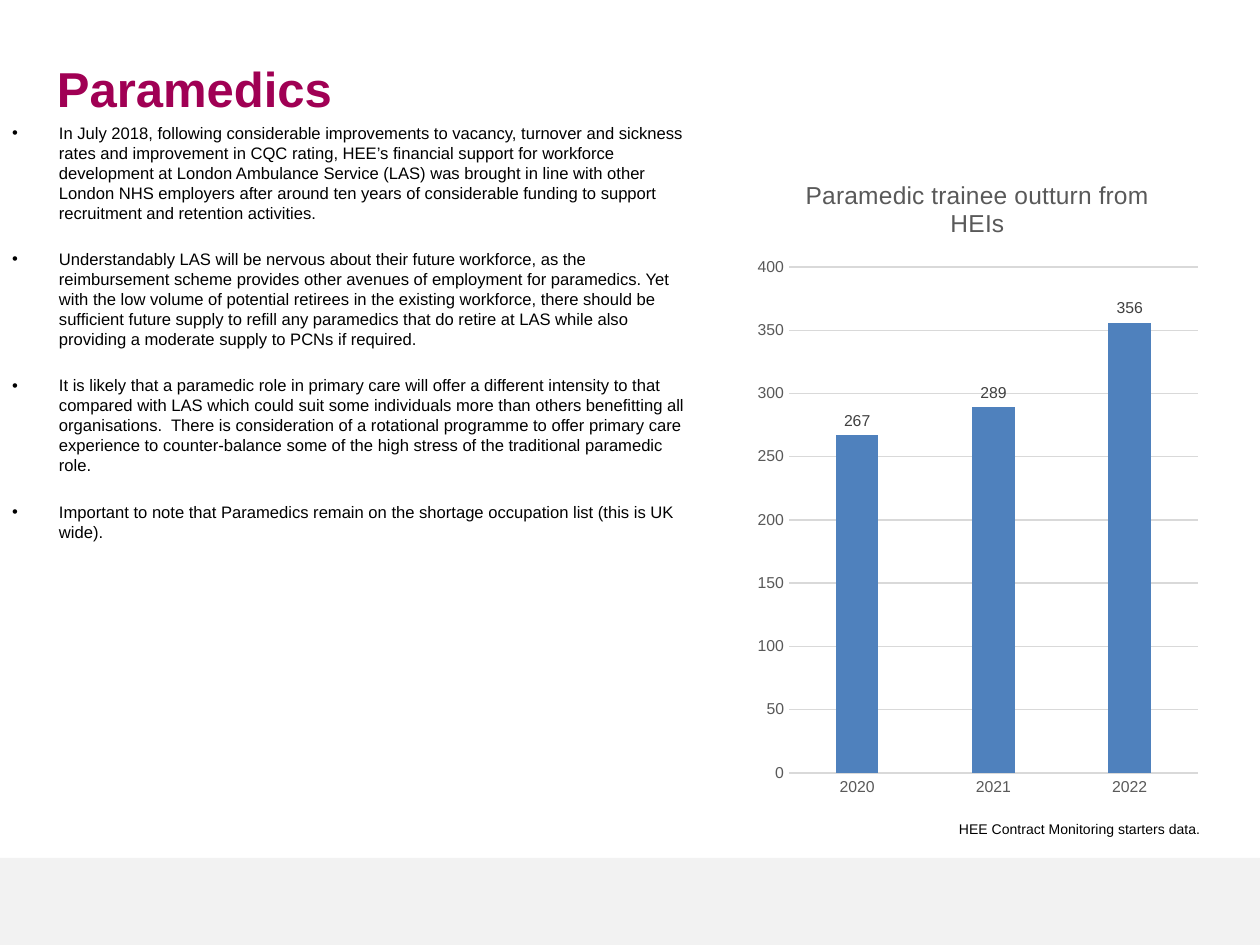
from dataclasses import dataclass

from lxml.etree import SubElement
from pptx import Presentation
from pptx.chart.data import CategoryChartData
from pptx.dml.color import RGBColor
from pptx.enum.chart import XL_CHART_TYPE as ChartType
from pptx.enum.chart import XL_LABEL_POSITION as LabelPosition
from pptx.enum.chart import XL_TICK_MARK as TickMark
from pptx.enum.shapes import MSO_SHAPE as Shape
from pptx.oxml import parse_xml
from pptx.oxml.ns import nsdecls, qn
from pptx.util import Pt

EMU_PER_PX = 914400 / 126


@dataclass(frozen=True)
class Theme:
    font: str = "Arial"
    heading: str = "A00054"
    ink: str = "000000"
    band: str = "F2F2F2"
    bar: str = "4F81BD"
    grid: str = "D9D9D9"
    axis: str = "595959"
    label: str = "404040"
    heading_size: float = 28
    body_size: float = 9.5
    body_line: float = 11.4
    body_gap: float = 15.1
    note_size: float = 8
    chart_title_size: float = 14
    chart_size: float = 9


@dataclass(frozen=True)
class Area:
    left: int
    top: int
    width: int
    height: int

    def emu(self) -> tuple:
        return tuple(px(side) for side in (self.left, self.top, self.width, self.height))


@dataclass(frozen=True)
class TextBlock:
    area: Area
    lines: tuple
    size: float
    color: str
    bold: bool = False
    bulleted: bool = False


THEME = Theme()
CHART_AREA = Area(748, 155, 459, 655)
PLOT_AREA = Area(789, 267, 409, 506)
BULLET_INDENT = 47
CHART_TITLE = "Paramedic trainee outturn from HEIs"
OUTTURN = {"2020": 267, "2021": 289, "2022": 356}
BULLETS = (
    "In July 2018, following considerable improvements to vacancy, turnover and sickness rates "
    "and improvement in CQC rating, HEE’s financial support for workforce development at London "
    "Ambulance Service (LAS) was brought in line with other London NHS employers after around "
    "ten years of considerable funding to support recruitment and retention activities.",
    "Understandably LAS will be nervous about their future workforce, as the reimbursement scheme "
    "provides other avenues of employment for paramedics. Yet with the low volume of potential "
    "retirees in the existing workforce, there should be sufficient future supply to refill any "
    "paramedics that do retire at LAS while also providing a moderate supply to PCNs if required.",
    "It is likely that a paramedic role in primary care will offer a different intensity to that "
    "compared with LAS which could suit some individuals more than others benefitting all "
    "organisations.  There is consideration of a rotational programme to offer primary care "
    "experience to counter-balance some of the high stress of the traditional paramedic role.",
    "Important to note that Paramedics remain on the shortage occupation list (this is UK wide).",
)
BLOCKS = (
    TextBlock(Area(57, 58, 610, 56), ("Paramedics",), THEME.heading_size, THEME.heading, bold=True),
    TextBlock(Area(12, 123, 686, 660), BULLETS, THEME.body_size, THEME.ink, bulleted=True),
    TextBlock(Area(959, 821, 250, 18), ("HEE Contract Monitoring starters data.",),
              THEME.note_size, THEME.ink),
)


def px(length: int) -> int:
    """Turn pixels into EMU."""
    return round(length * EMU_PER_PX)


def style_font(font, size: float, color: str, bold: bool = False) -> None:
    """Set the theme face with a size, colour and weight."""
    font.name = THEME.font
    font.size = Pt(size)
    font.bold = bold
    font.color.rgb = RGBColor.from_string(color)


def add_bullet(para, first: bool) -> None:
    """Give a paragraph a hanging bullet and the body spacing."""
    para.line_spacing = Pt(THEME.body_line)
    if not first:
        para.space_before = Pt(THEME.body_gap)
    properties = para._p.get_or_add_pPr()
    properties.set("marL", str(px(BULLET_INDENT)))
    properties.set("indent", str(-px(BULLET_INDENT)))
    SubElement(properties, qn("a:buFont")).set("typeface", THEME.font)
    SubElement(properties, qn("a:buChar")).set("char", "•")


def add_text(page, block: TextBlock) -> None:
    """Draw a text block with one paragraph per line."""
    frame = page.shapes.add_textbox(*block.area.emu()).text_frame
    frame.word_wrap = True
    frame.margin_left = frame.margin_right = frame.margin_top = frame.margin_bottom = 0
    for index, line in enumerate(block.lines):
        para = frame.add_paragraph() if index else frame.paragraphs[0]
        if block.bulleted:
            add_bullet(para, index == 0)
        span = para.add_run()
        span.text = line
        style_font(span.font, block.size, block.color, block.bold)


def add_band(page, area: Area) -> None:
    """Draw the footer band."""
    band = page.shapes.add_shape(Shape.RECTANGLE, *area.emu())
    band.shadow.inherit = False
    band.fill.solid()
    band.fill.fore_color.rgb = RGBColor.from_string(THEME.band)
    band.line.fill.background()


def style_axis(axis) -> None:
    """Set an axis to plain labels without tick marks."""
    axis.major_tick_mark = axis.minor_tick_mark = TickMark.NONE
    style_font(axis.tick_labels.font, THEME.chart_size, THEME.axis)


def style_line(line) -> None:
    """Set a thin grid-coloured line."""
    line.width = Pt(0.75)
    line.color.rgb = RGBColor.from_string(THEME.grid)


def place_plot(chart) -> None:
    """Fix the inner plot area within the chart."""
    fractions = {
        "x": (PLOT_AREA.left - CHART_AREA.left) / CHART_AREA.width,
        "y": (PLOT_AREA.top - CHART_AREA.top) / CHART_AREA.height,
        "w": PLOT_AREA.width / CHART_AREA.width,
        "h": PLOT_AREA.height / CHART_AREA.height,
    }
    modes = '<c:xMode val="edge"/><c:yMode val="edge"/>'
    sides = "".join(f'<c:{name} val="{value:.4f}"/>' for name, value in fractions.items())
    layout = parse_xml(
        f'<c:layout {nsdecls("c")}><c:manualLayout><c:layoutTarget val="inner"/>'
        f"{modes}{sides}</c:manualLayout></c:layout>"
    )
    plot_area = chart._chartSpace.chart.plotArea
    for previous in plot_area.findall(qn("c:layout")):
        plot_area.remove(previous)
    plot_area.insert(0, layout)


def add_outturn_chart(page) -> None:
    """Draw the column chart of trainee outturn."""
    data = CategoryChartData()
    data.categories = list(OUTTURN)
    data.add_series("Series 1", list(OUTTURN.values()))
    chart = page.shapes.add_chart(ChartType.COLUMN_CLUSTERED, *CHART_AREA.emu(), data).chart
    style_font(chart.font, THEME.chart_size, THEME.ink)
    chart.has_legend = False
    chart.has_title = True
    span = chart.chart_title.text_frame.paragraphs[0].add_run()
    span.text = CHART_TITLE
    style_font(span.font, THEME.chart_title_size, THEME.axis)
    chart.chart_title.include_in_layout = False
    style_axis(chart.category_axis)
    style_line(chart.category_axis.format.line)
    values = chart.value_axis
    style_axis(values)
    values.minimum_scale, values.maximum_scale, values.major_unit = 0, 400, 50
    values.format.line.fill.background()
    style_line(values.major_gridlines.format.line)
    plot = chart.plots[0]
    plot.vary_by_categories = False
    plot.gap_width, plot.overlap = 219, -27
    fill = plot.series[0].format.fill
    fill.solid()
    fill.fore_color.rgb = RGBColor.from_string(THEME.bar)
    labels = plot.series[0].data_labels
    labels.show_value = True
    labels.position = LabelPosition.OUTSIDE_END
    style_font(labels.font, THEME.chart_size, THEME.label)
    place_plot(chart)


def main() -> None:
    """Build the slide and save it."""
    deck = Presentation()
    deck.slide_width, deck.slide_height = px(1260), px(945)
    page = deck.slides.add_slide(deck.slide_layouts[6])
    add_band(page, Area(0, 858, 1260, 87))
    for block in BLOCKS:
        add_text(page, block)
    add_outturn_chart(page)
    deck.save("out.pptx")


if __name__ == "__main__":
    main()
